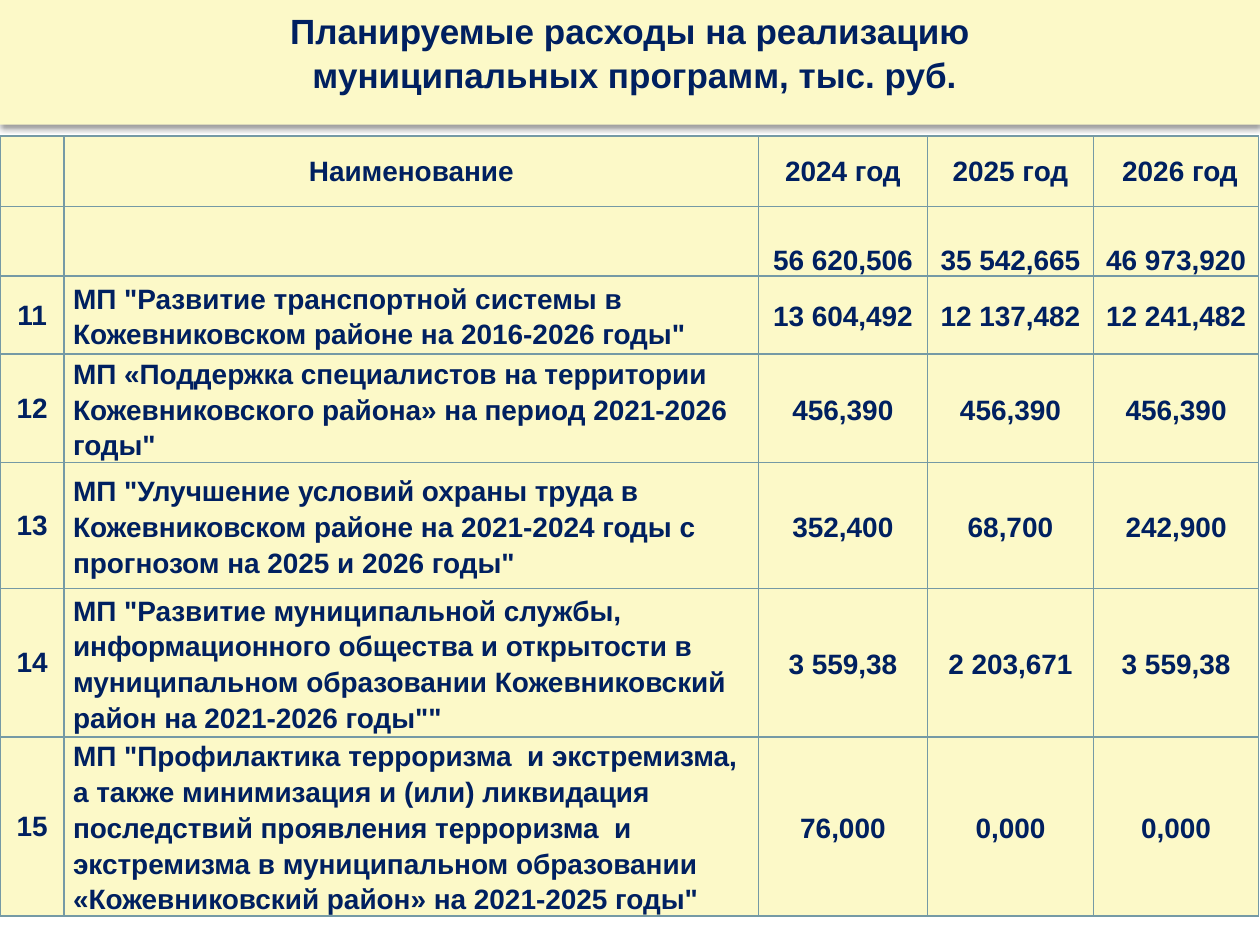
from dataclasses import dataclass

from lxml.etree import SubElement
from pptx import Presentation
from pptx.dml.color import RGBColor
from pptx.enum.text import MSO_ANCHOR as Anchor, MSO_AUTO_SIZE as AutoSize, PP_ALIGN as Align
from pptx.oxml.ns import qn
from pptx.util import Inches, Pt


@dataclass(frozen=True)
class Theme:
    font: str = "Arial"
    ink: str = "002060"
    panel: str = "FCF9C8"
    border: str = "759AA5"
    shadow: str = "000000"
    title_size: int = 20
    table_size: int = 16


@dataclass(frozen=True)
class Program:
    number: str
    name: str
    amounts: tuple[str, str, str]


@dataclass(frozen=True)
class CellStyle:
    align: Align = Align.CENTER
    anchor: Anchor = Anchor.MIDDLE
    side_margin: float = 0.01
    top_margin: float = 0.01
    line_spacing: float = 1.0


THEME = Theme()
LABEL = CellStyle()
TOTAL = CellStyle(anchor=Anchor.BOTTOM)
NAME = CellStyle(align=Align.LEFT, side_margin=0.07, top_margin=0, line_spacing=1.15)
AMOUNT = CellStyle(side_margin=0.07, top_margin=0, line_spacing=1.15)

TITLE = "Планируемые расходы на реализацию\n муниципальных программ, тыс. руб."
HEADINGS = ("", "Наименование", "2024 год", "2025 год", " 2026 год")
TOTALS = ("", "", "56 620,506", "35 542,665", "46 973,920")
PROGRAMS = (
    Program("11", 'МП "Развитие транспортной системы в Кожевниковском районе '
            'на 2016-2026 годы"', ("13 604,492", "12 137,482", "12 241,482")),
    Program("12", 'МП «Поддержка специалистов на территории Кожевниковского района» '
            'на период 2021-2026 годы"', ("456,390", "456,390", "456,390")),
    Program("13", 'МП "Улучшение условий охраны труда в Кожевниковском районе '
            'на 2021-2024 годы с прогнозом на 2025 и 2026 годы"',
            ("352,400", "68,700", "242,900")),
    Program("14", 'МП "Развитие муниципальной службы, информационного общества и '
            'открытости в муниципальном образовании Кожевниковский район '
            'на 2021-2026 годы""', ("3 559,38", "2 203,671", "3 559,38")),
    Program("15", 'МП "Профилактика терроризма  и экстремизма, а также минимизация и '
            '(или) ликвидация последствий проявления терроризма  и экстремизма в '
            'муниципальном образовании «Кожевниковский район» на 2021-2025 годы"',
            ("76,000", "0,000", "0,000")),
)
COLUMN_WIDTHS = (0.51, 5.51, 1.34, 1.32, 1.31)
ROW_HEIGHTS = (0.56, 0.55, 0.62, 0.86, 1, 1.18, 1.28)


def color(value: str) -> RGBColor:
    return RGBColor.from_string(value)


def fill_panel(target) -> None:
    target.fill.solid()
    target.fill.fore_color.rgb = color(THEME.panel)


def format_text(text_frame, size: int, align: Align, line_spacing: float) -> None:
    for paragraph in text_frame.paragraphs:
        paragraph.alignment = align
        paragraph.line_spacing = line_spacing
        for run in paragraph.runs:
            run.font.name = THEME.font
            run.font.size = Pt(size)
            run.font.bold = True
            run.font.color.rgb = color(THEME.ink)


def add_drop_shadow(shape) -> None:
    shape.shadow.inherit = False
    effects = shape._element.spPr.find(qn("a:effectLst"))
    shadow = SubElement(effects, qn("a:outerShdw"), blurRad=str(Pt(3.1)),
                        dist=str(Pt(2)), dir="5400000", rotWithShape="0")
    shade = SubElement(shadow, qn("a:srgbClr"), val=THEME.shadow)
    SubElement(shade, qn("a:alpha"), val="38000")


def set_title(slide) -> None:
    title = slide.shapes.title
    title.left, title.top = Inches(0), Inches(0)
    title.width, title.height = Inches(10), Inches(0.99)
    fill_panel(title)
    add_drop_shadow(title)
    text_frame = title.text_frame
    text_frame.text = TITLE
    text_frame.auto_size = AutoSize.NONE
    text_frame.vertical_anchor = Anchor.TOP
    text_frame.margin_top = Inches(0.06)
    format_text(text_frame, THEME.title_size, Align.CENTER, 1.05)


def add_borders(cell) -> None:
    properties = cell._tc.get_or_add_tcPr()
    for index, side in enumerate(("lnL", "lnR", "lnT", "lnB")):
        line = SubElement(properties, qn(f"a:{side}"), w=str(Pt(1)))
        fill = SubElement(line, qn("a:solidFill"))
        SubElement(fill, qn("a:srgbClr"), val=THEME.border)
        properties.insert(index, line)


def write_cell(cell, text: str, style: CellStyle) -> None:
    fill_panel(cell)
    add_borders(cell)
    cell.vertical_anchor = style.anchor
    cell.margin_left = cell.margin_right = Inches(style.side_margin)
    cell.margin_top, cell.margin_bottom = Inches(style.top_margin), Inches(0)
    cell.text_frame.text = text
    format_text(cell.text_frame, THEME.table_size, style.align, style.line_spacing)


def add_expense_table(slide) -> None:
    rows = [[(text, LABEL) for text in HEADINGS], [(text, TOTAL) for text in TOTALS]]
    for program in PROGRAMS:
        amounts = [(amount, AMOUNT) for amount in program.amounts]
        rows.append([(program.number, LABEL), (program.name, NAME), *amounts])
    frame = slide.shapes.add_table(len(rows), len(COLUMN_WIDTHS), Inches(0), Inches(1.08),
                                   Inches(10), Inches(sum(ROW_HEIGHTS)))
    table = frame.table
    table.first_row = table.horz_banding = False
    for column, width in zip(table.columns, COLUMN_WIDTHS):
        column.width = Inches(width)
    for row, height, contents in zip(table.rows, ROW_HEIGHTS, rows):
        row.height = Inches(height)
        for cell, (text, style) in zip(row.cells, contents):
            write_cell(cell, text, style)


def main() -> None:
    presentation = Presentation()
    presentation.slide_width, presentation.slide_height = Inches(10), Inches(7.5)
    slide = presentation.slides.add_slide(presentation.slide_layouts[5])
    set_title(slide)
    add_expense_table(slide)
    presentation.save("out.pptx")


if __name__ == "__main__":
    main()
